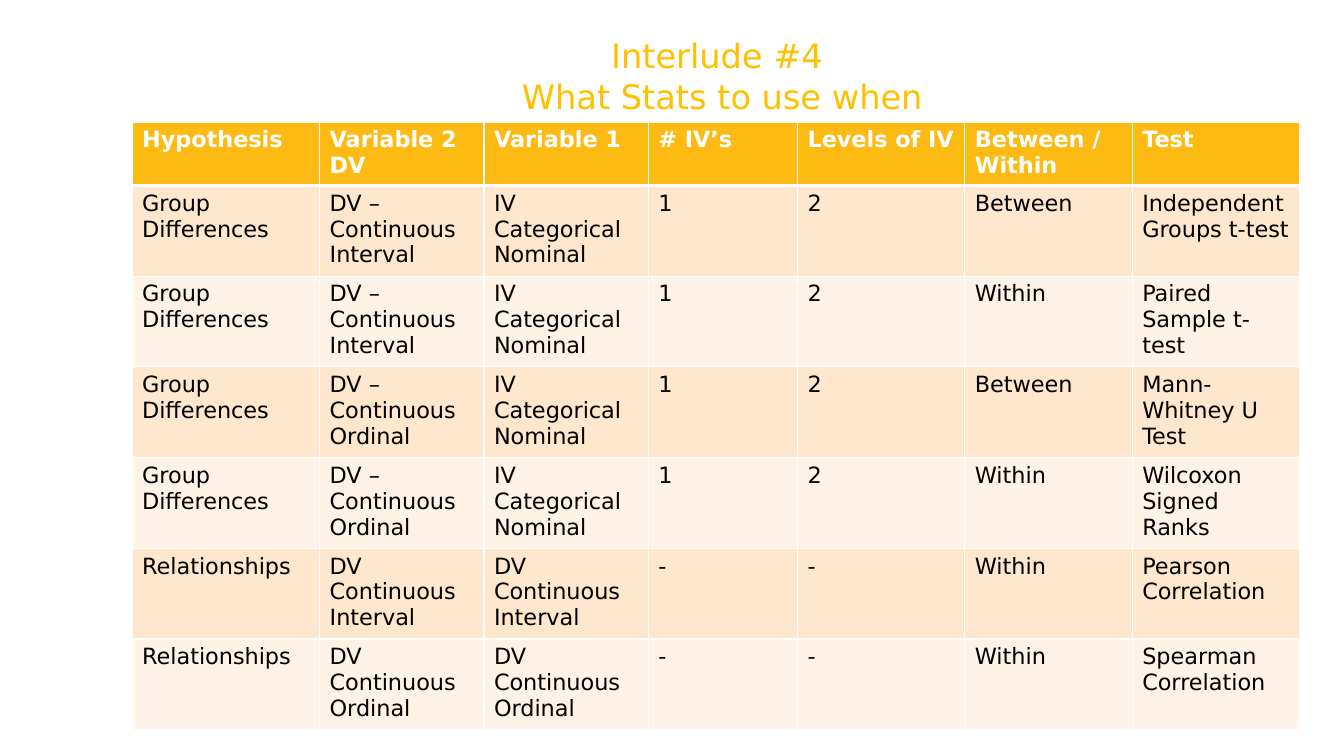
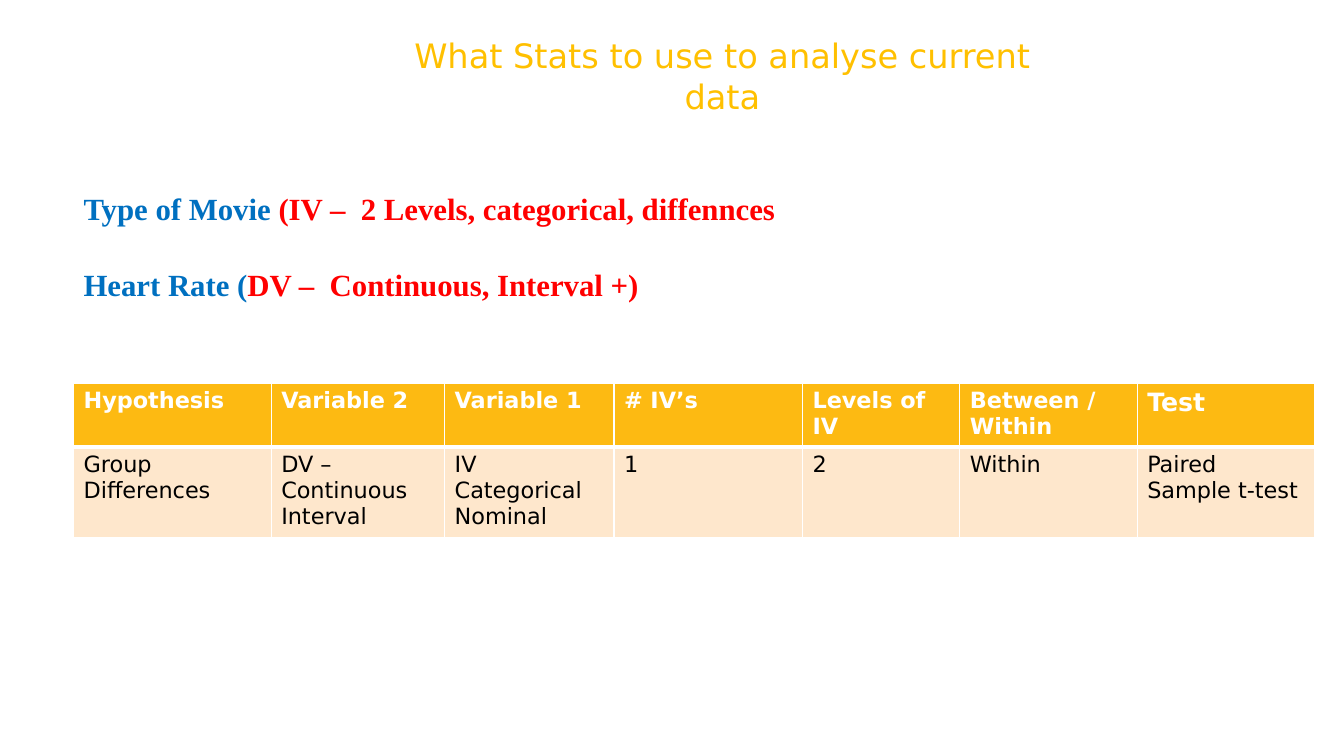
"""Build two slides on choosing a statistical test."""
from pptx import Presentation
from pptx.dml.color import RGBColor
from pptx.enum.text import MSO_ANCHOR, MSO_AUTO_SIZE, PP_ALIGN
from pptx.oxml import parse_xml
from pptx.oxml.ns import nsdecls
from pptx.util import Inches, Pt


class Theme:
    gold = RGBColor.from_string("FFC000")
    white = RGBColor.from_string("FFFFFF")
    black = RGBColor.from_string("000000")
    blue = RGBColor.from_string("0070C0")
    red = RGBColor.from_string("FF0000")
    header_fill = RGBColor.from_string("FDBA12")
    band_fills = [RGBColor.from_string("FEE7CC"), RGBColor.from_string("FFF3E7")]
    sans, serif = "DejaVu Sans", "Times New Roman"
    title = {"name": sans, "size": Pt(24), "bold": False}
    header = {"name": sans, "size": Pt(16), "bold": True}
    body = {"name": sans, "size": Pt(16), "bold": False}
    variable = {"name": serif, "size": Pt(22), "bold": True}
    thin, thick = 1, 3


def format_spans(frame, style, color):
    for para in frame.paragraphs:
        for span in para.runs:
            for key, value in style.items():
                setattr(span.font, key, value)
            span.font.color.rgb = color


def add_test_table(page, left, top, widths, rows):
    heights = [0.63] + [0.9] * (len(rows) - 1)
    table = page.shapes.add_table(
        len(rows), len(widths), Inches(left), Inches(top),
        Inches(sum(widths)), Inches(sum(heights))).table
    for column, width in zip(table.columns, widths):
        column.width = Inches(width)
    for number, (row, texts) in enumerate(zip(table.rows, rows)):
        row.height = Inches(heights[number])
        is_header = number == 0
        edges = {"lnL": Theme.thin, "lnR": Theme.thin,
                 "lnT": Theme.thick if number == 1 else Theme.thin,
                 "lnB": Theme.thick if is_header else Theme.thin}
        for cell, text in zip(row.cells, texts):
            cell.text = text
            format_spans(cell.text_frame,
                         Theme.header if is_header else Theme.body,
                         Theme.white if is_header else Theme.black)
            properties = cell._tc.get_or_add_tcPr()
            for edge, width in edges.items():
                properties.append(parse_xml(
                    f'<a:{edge} {nsdecls("a")} w="{Pt(width)}"><a:solidFill>'
                    f'<a:srgbClr val="{Theme.white}"/></a:solidFill></a:{edge}>'))
            cell.fill.solid()
            cell.fill.fore_color.rgb = (
                Theme.header_fill if is_header else Theme.band_fills[(number - 1) % 2])
    return table


deck = Presentation()
deck.slide_width, deck.slide_height = Inches(13.33), Inches(7.5)

pages = []
for heading in ["Interlude #4 \nWhat Stats to use when",
                "What Stats to use to analyse current data"]:
    page = deck.slides.add_slide(deck.slide_layouts[5])
    title = page.shapes.title
    place = {"left": 3.83, "top": 0.3, "width": 6.67, "height": 0.91}
    for key, value in place.items():
        setattr(title, key, Inches(value))
    frame = title.text_frame
    frame.text = heading
    layout = {"word_wrap": True, "auto_size": MSO_AUTO_SIZE.NONE,
              "vertical_anchor": MSO_ANCHOR.TOP}
    for key, value in layout.items():
        setattr(frame, key, value)
    for para in frame.paragraphs:
        para.alignment = PP_ALIGN.CENTER
    format_spans(frame, Theme.title, Theme.gold)
    pages.append(page)
overview, current_data = pages

header = ["Hypothesis", "Variable 2", "Variable 1", "# IV’s",
          "Levels of IV", "Between / Within", "Test"]
overview_header = [header[0], "Variable 2\nDV", *header[2:]]
tests = []
for scale, design, test in [
        ("Interval", "Between", "Independent Groups t-test"),
        ("Interval", "Within", "Paired Sample t-test"),
        ("Ordinal", "Between", "Mann-Whitney U Test"),
        ("Ordinal", "Within", "Wilcoxon Signed Ranks")]:
    tests.append(["Group Differences", f"DV –\nContinuous {scale}",
                  "IV\nCategorical Nominal", "1", "2", design, test])
for scale, test in [("Interval", "Pearson Correlation"),
                    ("Ordinal", "Spearman Correlation")]:
    measure = f"DV\nContinuous\n{scale}"
    tests.append(["Relationships", measure, measure, "-", "-", "Within", test])

add_test_table(overview, 1.31, 1.21, [1.86, 1.63, 1.63, 1.48, 1.66, 1.66, 1.66],
               [overview_header, *tests])

box = current_data.shapes.add_textbox(
    Inches(0.73), Inches(1.83), Inches(12.15), Inches(1.21))
frame = box.text_frame
frame.word_wrap = True
variables = [("Type of Movie ", "(IV –  2 Levels, categorical, diffennces"),
             ("Heart Rate (", "DV –  Continuous, Interval +)")]
for number, parts in enumerate(variables):
    para = frame.add_paragraph() if number else frame.paragraphs[0]
    if number:
        para.space_before = Pt(28)
    for text in parts:
        para.add_run().text = text
format_spans(frame, Theme.variable, Theme.red)
for para in frame.paragraphs:
    para.runs[0].font.color.rgb = Theme.blue

table = add_test_table(current_data, 0.73, 3.8,
                       [1.96, 1.72, 1.68, 1.87, 1.56, 1.76, 1.76], [header, tests[1]])
table.cell(0, 6).text_frame.paragraphs[0].runs[0].font.size = Pt(18)

deck.save("out.pptx")
